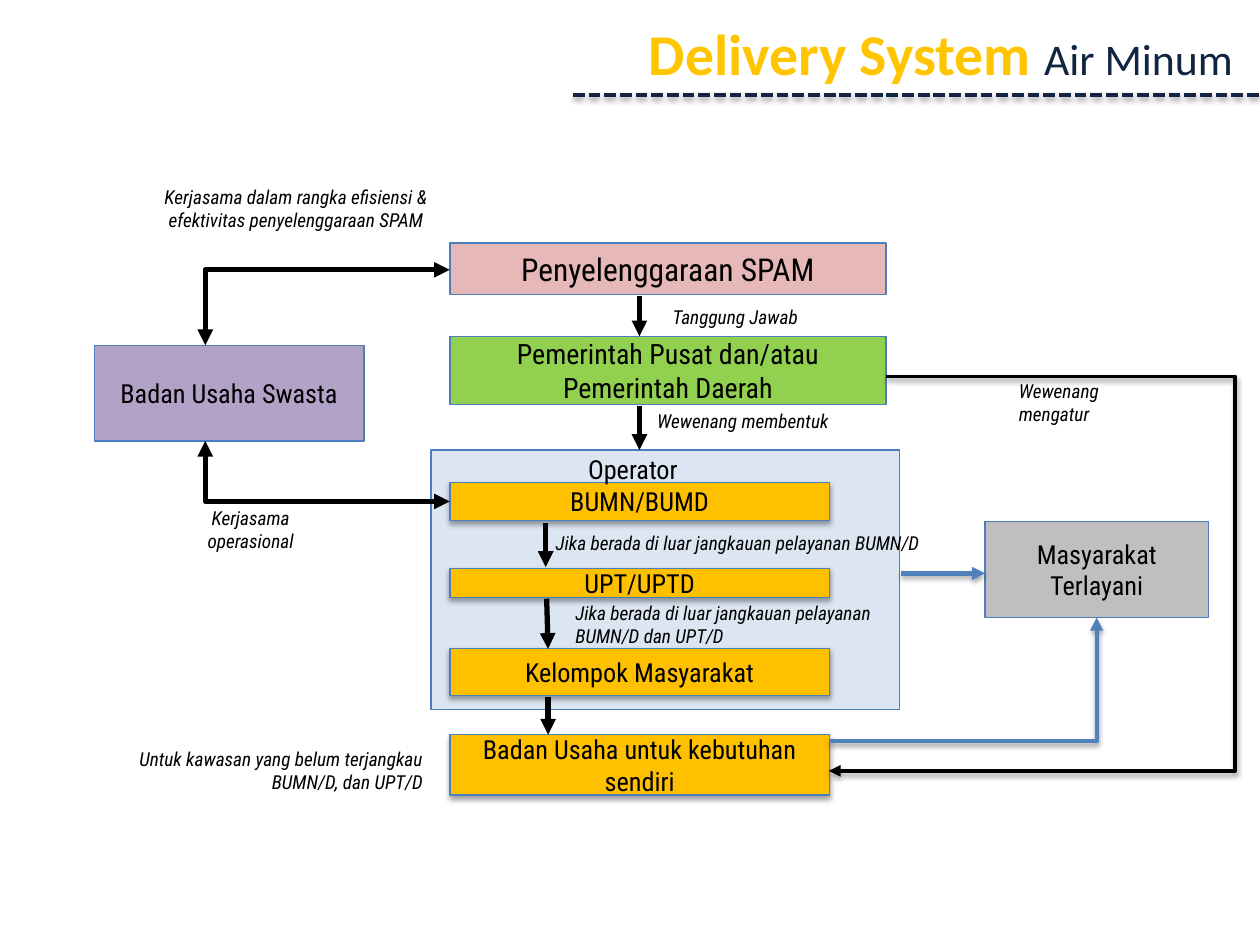
from lxml.etree import SubElement
from pptx import Presentation
from pptx.dml.color import RGBColor
from pptx.enum.shapes import MSO_CONNECTOR, MSO_SHAPE
from pptx.enum.text import MSO_ANCHOR, PP_ALIGN
from pptx.oxml.ns import qn
from pptx.util import Cm, Pt

FONT = "Roboto Condensed"
BLACK, NAVY, BLUE, BORDER = "000000", "10253F", "4F81BD", "4B7EBC"
YELLOW, GOLD, PALE_BLUE = "FFC500", "FFC000", "DCE6F2"
PINK, GREEN, PURPLE, GREY = "E6B9B8", "92D050", "B3A2C7", "BFBFBF"
LEFT, CENTER, RIGHT = PP_ALIGN.LEFT, PP_ALIGN.CENTER, PP_ALIGN.RIGHT


def color(value):
    """Turn a hex string into a colour."""
    return RGBColor.from_string(value)


def set_format(target, values):
    """Set every attribute named in a dict of format values."""
    for name, value in values.items():
        setattr(target, name, value)


def place(box, left, top):
    """Turn a position inside a box into slide lengths."""
    return Cm(box[0] + left), Cm(box[1] + top)


def add_effects(shape, shadow):
    """Give a shape a soft downward shadow, or none."""
    effects = SubElement(shape._element.spPr, qn("a:effectLst"))
    if shadow:
        outer = SubElement(effects, qn("a:outerShdw"), blurRad=str(Pt(3.1)),
                           dist=str(Pt(1.7)), dir="5400000", rotWithShape="0")
        tint = SubElement(outer, qn("a:srgbClr"), val=BLACK)
        SubElement(tint, qn("a:alpha"), val="36000")


def write_text(shape, text, size, align, italic=False):
    """Fill a shape with one paragraph for each line of text."""
    frame = shape.text_frame
    set_format(frame, {"word_wrap": True, "text": text})
    for paragraph in frame.paragraphs:
        paragraph.alignment = align
        set_format(paragraph.runs[0].font,
                   {"name": FONT, "size": Pt(size), "italic": italic})
        paragraph.runs[0].font.color.rgb = color(BLACK)


def add_block(slide, box, left, top, width, height, fill, text="", size=15, shadow=False):
    """Add a bordered rectangle with centred text."""
    shape = slide.shapes.add_shape(
        MSO_SHAPE.RECTANGLE, *place(box, left, top), Cm(width), Cm(height))
    shape.fill.solid()
    shape.fill.fore_color.rgb = color(fill)
    shape.line.color.rgb = color(BORDER)
    shape.line.width = Pt(0.75)
    add_effects(shape, shadow)
    if text:
        write_text(shape, text, size, CENTER)
        shape.text_frame.vertical_anchor = MSO_ANCHOR.MIDDLE


def add_note(slide, box, left, top, width, height, text, align=LEFT, size=11, italic=True):
    """Add a free label."""
    label = slide.shapes.add_textbox(*place(box, left, top), Cm(width), Cm(height))
    write_text(label, text, size, align, italic)


def add_line(slide, box, start, end, ends=("tailEnd",), preset="line", line_color=BLACK,
             width=3, shadow=False, dash=None, bend=None):
    """Add a straight or bent connector with the given arrowheads."""
    connector = slide.shapes.add_connector(
        MSO_CONNECTOR.STRAIGHT, *place(box, *start), *place(box, *end))
    connector.line.color.rgb = color(line_color)
    connector.line.width = Pt(width)
    geometry = connector._element.spPr.find(qn("a:prstGeom"))
    geometry.set("prst", preset)
    if bend is not None:
        SubElement(geometry.find(qn("a:avLst")), qn("a:gd"), name="adj1", fmla=f"val {bend}")
    outline = connector.line._get_or_add_ln()
    if dash:
        SubElement(outline, qn("a:prstDash"), val=dash)
    for end_name in ends:
        SubElement(outline, qn(f"a:{end_name}"), type="triangle")
    add_effects(connector, shadow)


def draw_title(slide, box):
    """Place the two-tone heading above its dashed rule."""
    width, height = box[2:]
    add_line(slide, box, (1.65, height), (width, height), ends=(), line_color=NAVY,
             width=2.25, shadow=True, dash="sysDash")
    heading = slide.shapes.add_textbox(*place(box, 0, 0), Cm(width - 0.3), Cm(height))
    heading.text_frame.word_wrap = True
    paragraph = heading.text_frame.paragraphs[0]
    paragraph.alignment = RIGHT
    for text, size, tone, bold in (("Delivery System ", 33, YELLOW, True),
                                   ("Air Minum", 25, NAVY, False)):
        run = paragraph.add_run()
        run.text = text
        set_format(run.font, {"name": "Calibri", "size": Pt(size), "bold": bold})
        run.font.color.rgb = color(tone)


def draw_operators(slide, box):
    """Place the operator panel and its chain of providers."""
    add_block(slide, box, 0, 0, *box[2:], PALE_BLUE)
    for top, height, text in ((0.66, 0.76, "BUMN/BUMD"),
                              (2.39, 0.58, "UPT/UPTD"),
                              (4.01, 0.94, "Kelompok Masyarakat"),
                              (5.74, 1.22, "Badan Usaha untuk kebutuhan sendiri")):
        add_block(slide, box, 0.38, top, 7.65, height, GOLD, text, shadow=True)
    add_note(slide, box, 0.45, -0.05, 7.24, 0.89, "Operator", CENTER, 15, False)
    add_note(slide, box, 2.26, 1.52, 8.86, 0.74,
             "Jika berada di luar jangkauan pelayanan BUMN/D")
    add_note(slide, box, 2.66, 2.92, 7.09, 1.19,
             "Jika berada di luar jangkauan pelayanan BUMN/D dan UPT/D")
    add_note(slide, box, -6.79, 5.87, 6.88, 1.19,
             "Untuk kawasan yang belum terjangkau BUMN/D, dan UPT/D", RIGHT)
    for start, end in (((2.31, 1.47), (2.31, 2.36)),
                       ((2.33, 3), (2.36, 4.01)),
                       ((2.36, 4.98), (2.36, 5.74))):
        add_line(slide, box, start, end)


def draw_government(slide, box):
    """Place the SPAM service and the government responsible for it."""
    width = box[2]
    add_block(slide, box, 0, 0, width, 1.04, PINK, "Penyelenggaraan SPAM", 18)
    add_block(slide, box, 0, 1.88, width, 1.37, GREEN,
              "Pemerintah Pusat dan/atau\nPemerintah Daerah", 16)
    add_note(slide, box, 4.24, 1.12, 4.85, 0.74, "Tanggung Jawab")
    add_note(slide, box, 3.93, 3.23, 4.85, 0.74, "Wewenang membentuk")
    for top, bottom in ((1.07, 1.88), (3.28, 4.17)):
        add_line(slide, box, (3.82, top), (3.82, bottom))


def draw_partner(slide, box):
    """Place the private partner with its two-way links."""
    width, height = box[2:]
    add_block(slide, box, 0, 0, width, height, PURPLE, "Badan Usaha Swasta")
    add_note(slide, box, 0.97, -3.35, 6.2, 1.19,
             "Kerjasama dalam rangka efisiensi & efektivitas penyelenggaraan SPAM", CENTER)
    add_note(slide, box, 1.3, 3.12, 3.71, 1.19, "Kerjasama\noperasional", CENTER)
    for start, end in (((7.17, -1.52), (2.24, 0)), ((7.17, 3.15), (2.24, height))):
        add_line(slide, box, start, end, ("headEnd", "tailEnd"), "bentConnector2")


def draw_community(slide, box):
    """Place the served community, its supply links and the regulation link."""
    width, height = box[2:]
    add_block(slide, box, 0, 0, width, height, GREY, "Masyarakat\nTerlayani")
    add_note(slide, box, 0.43, -3, 2.49, 1.19, "Wewenang\nmengatur")
    supply = {"line_color": BLUE, "width": 2.5, "shadow": True}
    add_line(slide, box, (-1.7, 1.04), (0, 1.04), **supply)
    add_line(slide, box, (-3.15, 4.42), (width / 2, height), preset="bentConnector2", **supply)
    add_line(slide, box, (-2, -2.93), (-3.15, 5.02), preset="bentConnector3",
             width=2.25, shadow=True, bend=-611800)


def main():
    """Build the slide and save it."""
    presentation = Presentation()
    set_format(presentation, {"slide_width": Cm(25.4), "slide_height": Cm(19.05)})
    slide = presentation.slides.add_slide(presentation.slide_layouts[6])
    draw_title(slide, (9.9, 0.23, 15.5, 1.68))
    draw_operators(slide, (8.69, 9.07, 9.45, 5.23))
    draw_government(slide, (9.07, 4.9, 8.79, 3.25))
    draw_partner(slide, (1.9, 6.96, 5.44, 1.93))
    draw_community(slide, (19.86, 10.52, 4.5, 1.93))
    presentation.save("out.pptx")


if __name__ == "__main__":
    main()
